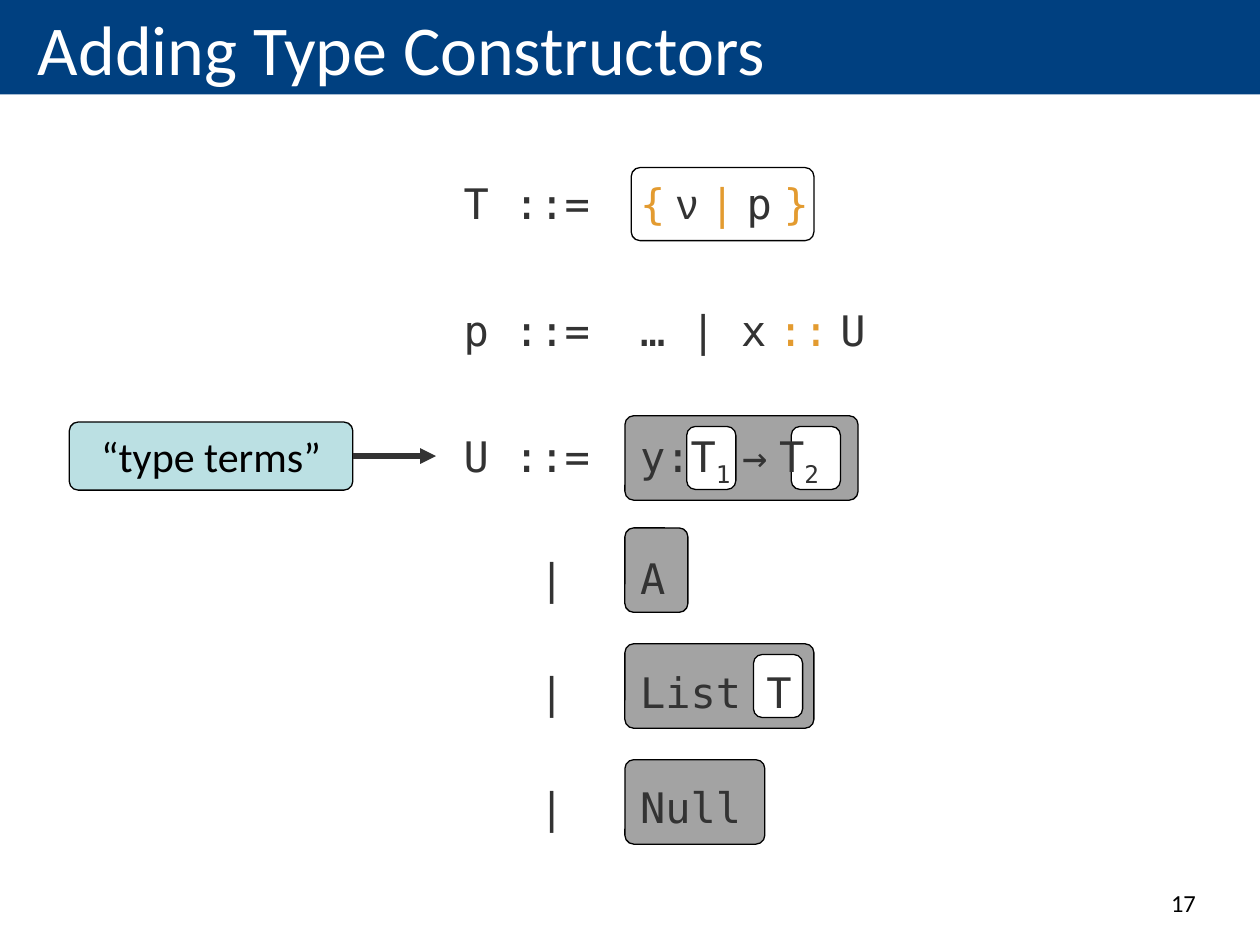
from lxml.etree import SubElement
from pptx import Presentation
from pptx.dml.color import RGBColor
from pptx.enum.shapes import MSO_CONNECTOR, MSO_SHAPE
from pptx.enum.text import MSO_ANCHOR, MSO_AUTO_SIZE, PP_ALIGN
from pptx.oxml.ns import qn
from pptx.util import Inches, Pt

TITLE = "Adding Type Constructors"
LABEL = "“type terms”"
PAGE = "17"
MONO, SANS, BODY = "DejaVu Sans Mono", "Arial", "Calibri"
INK, ACCENT, BLACK, WHITE = "333333", "E39B30", "000000", "FFFFFF"
GREY, NAVY, TEAL = "A3A3A3", "004080", "BBE0E3"

PLAIN = (MONO, INK, 0)
BRIGHT = (MONO, ACCENT, 0)
NARROW = (SANS, INK, 0)
SUB = (MONO, INK, -25000)
GAP = (" ", NARROW)
GRAMMAR = [
    (0, [("T ::=\t", PLAIN), ("{", BRIGHT), (" ν ", NARROW), ("|", BRIGHT), GAP,
         ("p", PLAIN), GAP, ("}", BRIGHT)]),
    (43.5, [("p ::=\t… | x", PLAIN), GAP, ("::", BRIGHT), GAP, ("U", PLAIN)]),
    (43.5, [("U ::=\ty:T", PLAIN), ("1", SUB), GAP, ("→", PLAIN), GAP,
            ("T", PLAIN), ("2", SUB)]),
    (36.7, [("\t|\tA", PLAIN)]),
    (36.7, [("\t|\tList T", PLAIN)]),
    (36.7, [("\t|\tNull", PLAIN)]),
]
TERM_LEFT, TERM_HEIGHT = 4.96, 0.67
TERMS = [(3.3, 1.85, [5.45, 6.28]), (4.19, 0.5, []), (5.11, 1.5, [5.98]), (6.03, 1.11, [])]
SLOT_WIDTH, SLOT_HEIGHT = 0.39, 0.5
CORNER = 0.07
TAB_STOPS = [0.6, 1.4]


def color(value):
    return RGBColor.from_string(value)


def style(run, size, font, ink):
    run.font.size = Pt(size)
    run.font.name = font
    run.font.color.rgb = color(ink)


def rounded(left, top, width, height, fill=None):
    box = slide.shapes.add_shape(MSO_SHAPE.ROUNDED_RECTANGLE, Inches(left), Inches(top),
                                 Inches(width), Inches(height))
    box.adjustments[0] = CORNER / min(width, height)
    box.shadow.inherit = False
    if fill:
        box.fill.solid()
        box.fill.fore_color.rgb = color(fill)
    else:
        box.fill.background()
    box.line.color.rgb = color(BLACK)
    box.line.width = Pt(0.75)
    return box


def write(box, text, size, ink, align, anchor):
    frame = box.text_frame
    frame.word_wrap = True
    frame.auto_size = MSO_AUTO_SIZE.NONE
    frame.vertical_anchor = anchor
    frame.text = text
    paragraph = frame.paragraphs[0]
    paragraph.alignment = align
    style(paragraph.runs[0], size, BODY, ink)


def add_grammar():
    box = slide.shapes.add_textbox(Inches(3.68), Inches(1.41), Inches(4), Inches(5.2))
    frame = box.text_frame
    frame.word_wrap = True
    frame.margin_left = frame.margin_right = frame.margin_top = frame.margin_bottom = 0
    for row, (space, parts) in enumerate(GRAMMAR):
        rule = frame.add_paragraph() if row else frame.paragraphs[0]
        rule.space_before = Pt(space)
        tabs = SubElement(rule._p.get_or_add_pPr(), qn("a:tabLst"))
        for stop in TAB_STOPS:
            SubElement(tabs, qn("a:tab"), pos=str(Inches(stop)), algn="l")
        for text, (font, ink, baseline) in parts:
            run = rule.add_run()
            run.text = text
            style(run, 24, font, ink)
            if baseline:
                run._r.get_or_add_rPr().set("baseline", str(baseline))


presentation = Presentation()
presentation.slide_width, presentation.slide_height = Inches(10), Inches(7.5)
slide = presentation.slides.add_slide(presentation.slide_layouts[5])

banner = slide.shapes.title
banner.left, banner.top = 0, 0
banner.width, banner.height = presentation.slide_width, Inches(0.75)
banner.fill.solid()
banner.fill.fore_color.rgb = color(NAVY)
write(banner, TITLE, 40, WHITE, PP_ALIGN.LEFT, MSO_ANCHOR.MIDDLE)
banner.text_frame.margin_left = Inches(0.3)

rounded(5.01, 1.33, 1.45, 0.58)
for top, width, slots in TERMS:
    rounded(TERM_LEFT, top, width, TERM_HEIGHT, GREY)
    for slot in slots:
        rounded(slot, top + (TERM_HEIGHT - SLOT_HEIGHT) / 2, SLOT_WIDTH, SLOT_HEIGHT, WHITE)
add_grammar()

label = rounded(0.55, 3.35, 2.25, 0.54, TEAL)
write(label, LABEL, 24, BLACK, PP_ALIGN.CENTER, MSO_ANCHOR.MIDDLE)
arrow = slide.shapes.add_connector(MSO_CONNECTOR.STRAIGHT, Inches(2.8), Inches(3.62),
                                   Inches(3.46), Inches(3.62))
arrow.begin_connect(label, 3)
arrow.line.color.rgb = color(INK)
arrow.line.width = Pt(3)
SubElement(arrow.line._get_or_add_ln(), qn("a:tailEnd"), type="triangle")
SubElement(arrow._element.spPr, qn("a:effectLst"))

page = slide.shapes.add_textbox(Inches(7.17), Inches(6.83), Inches(2.42), Inches(0.5))
write(page, PAGE, 14, BLACK, PP_ALIGN.RIGHT, MSO_ANCHOR.BOTTOM)

presentation.save("out.pptx")
